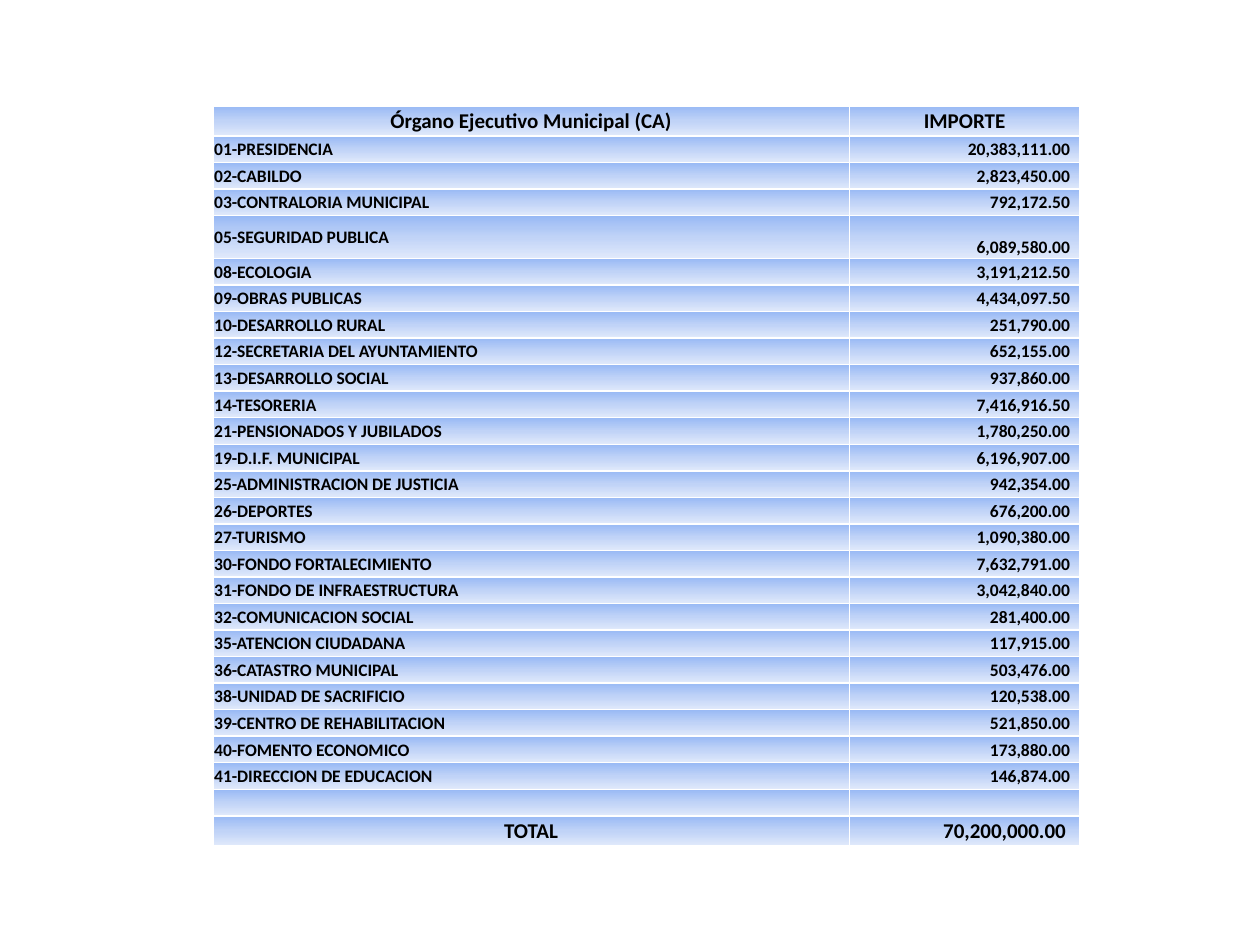
from pptx import Presentation
from pptx import util as u
from pptx.dml.color import RGBColor
from pptx.enum import text
from pptx.oxml import parse_xml
from pptx.oxml.ns import nsdecls

Inches, Pt = u.Inches, u.Pt
LEFT, CENTER, RIGHT = text.PP_ALIGN.LEFT, text.PP_ALIGN.CENTER, text.PP_ALIGN.RIGHT
MIDDLE, BOTTOM = text.MSO_ANCHOR.MIDDLE, text.MSO_ANCHOR.BOTTOM

COLORS = {"top": "98B9F5", "middle": "C0D3F7", "bottom": "E0E9FB",
          "border": "FFFFFF", "text": "000000"}
FONT = "Calibri"
HEADING = ("Órgano Ejecutivo Municipal (CA)", "IMPORTE")
TALL_ENTRY = "05-SEGURIDAD PUBLICA"
BUDGET = [
    ("01-PRESIDENCIA", "20,383,111.00"),
    ("02-CABILDO", "2,823,450.00"),
    ("03-CONTRALORIA MUNICIPAL", "792,172.50"),
    (TALL_ENTRY, "6,089,580.00"),
    ("08-ECOLOGIA", "3,191,212.50"),
    ("09-OBRAS PUBLICAS", "4,434,097.50"),
    ("10-DESARROLLO RURAL", "251,790.00"),
    ("12-SECRETARIA DEL AYUNTAMIENTO", "652,155.00"),
    ("13-DESARROLLO SOCIAL", "937,860.00"),
    ("14-TESORERIA", "7,416,916.50"),
    ("21-PENSIONADOS Y JUBILADOS", "1,780,250.00"),
    ("19-D.I.F. MUNICIPAL", "6,196,907.00"),
    ("25-ADMINISTRACION DE JUSTICIA", "942,354.00"),
    ("26-DEPORTES", "676,200.00"),
    ("27-TURISMO", "1,090,380.00"),
    ("30-FONDO FORTALECIMIENTO", "7,632,791.00"),
    ("31-FONDO DE INFRAESTRUCTURA", "3,042,840.00"),
    ("32-COMUNICACION SOCIAL", "281,400.00"),
    ("35-ATENCION CIUDADANA", "117,915.00"),
    ("36-CATASTRO MUNICIPAL", "503,476.00"),
    ("38-UNIDAD DE SACRIFICIO", "120,538.00"),
    ("39-CENTRO DE REHABILITACION", "521,850.00"),
    ("40-FOMENTO ECONOMICO", "173,880.00"),
    ("41-DIRECCION DE EDUCACION", "146,874.00"),
    ("", ""),
]
TOTAL = ("TOTAL", "70,200,000.00")


def paint_cell(cell):
    """Give a cell white borders and a vertical three-stop gradient."""
    properties = cell._tc.get_or_add_tcPr()
    for side in ("lnL", "lnR", "lnT", "lnB"):
        properties.append(parse_xml(
            f'<a:{side} {nsdecls("a")} w="{Pt(1)}"><a:solidFill>'
            f'<a:srgbClr val="{COLORS["border"]}"/></a:solidFill></a:{side}>'))
    stops = "".join(
        f'<a:gs pos="{position}"><a:srgbClr val="{COLORS[name]}"/></a:gs>'
        for position, name in ((0, "top"), (50000, "middle"), (100000, "bottom")))
    properties.append(parse_xml(
        f'<a:gradFill {nsdecls("a")} rotWithShape="1"><a:gsLst>{stops}</a:gsLst>'
        '<a:lin ang="5400000" scaled="0"/></a:gradFill>'))


def fill_cell(cell, words, size, align, right_margin=0.01, anchor=MIDDLE):
    cell.margin_left = cell.margin_top = Inches(0.01)
    cell.margin_right, cell.margin_bottom = Inches(right_margin), 0
    cell.vertical_anchor = anchor
    paint_cell(cell)
    para = cell.text_frame.paragraphs[0]
    para.alignment = align
    if not words:
        # Keeps an empty row from growing to the default text size
        para._p.append(parse_xml(f'<a:endParaRPr {nsdecls("a")} sz="{size * 100}"/>'))
        return
    para.text = words
    font = para.runs[0].font
    font.name, font.size, font.bold = FONT, Pt(size), True
    font.color.rgb = RGBColor.from_string(COLORS["text"])


def add_budget_table(page, left, top, width, height):
    count = len(BUDGET) + 2
    table = page.shapes.add_table(count, 2, left, top, width, height).table
    table.first_row = table.horz_banding = False
    table.columns[0].width = Inches(5.05)
    table.columns[1].width = width - Inches(5.05)

    # Row heights: entries share what the heading, total and tall rows leave
    edge_height, tall_height = Inches(0.24), Inches(0.34)
    entry_height = (height - 2 * edge_height - tall_height) // (len(BUDGET) - 1)
    for row in table.rows:
        row.height = entry_height
    table.rows[0].height = table.rows[count - 1].height = edge_height

    # Heading
    for column, words in enumerate(HEADING):
        fill_cell(table.cell(0, column), words, 12, CENTER)

    # Entries
    for index, (department, amount) in enumerate(BUDGET, start=1):
        tall = department == TALL_ENTRY
        if tall:
            table.rows[index].height = tall_height
        fill_cell(table.cell(index, 0), department, 10, LEFT)
        fill_cell(table.cell(index, 1), amount, 10, RIGHT, 0.08,
                  BOTTOM if tall else MIDDLE)

    # Total
    fill_cell(table.cell(count - 1, 0), TOTAL[0], 12, CENTER)
    fill_cell(table.cell(count - 1, 1), TOTAL[1], 12, RIGHT, 0.11)


def main():
    deck = Presentation()
    deck.slide_width, deck.slide_height = Inches(10), Inches(7.5)
    page = deck.slides.add_slide(deck.slide_layouts[6])
    add_budget_table(page, Inches(1.69), Inches(0.84), Inches(6.88), Inches(5.88))
    deck.save("out.pptx")


if __name__ == "__main__":
    main()
